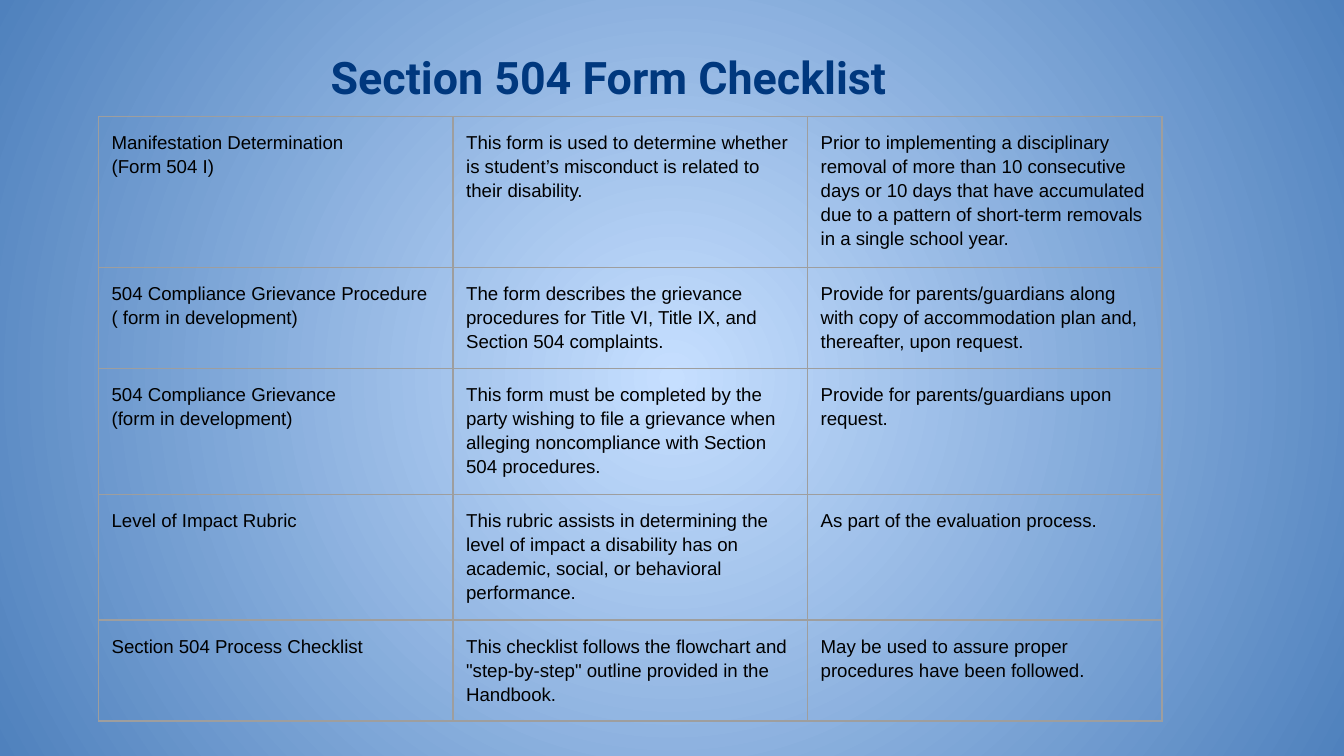
from lxml import etree
from pptx import Presentation
from pptx.dml.color import RGBColor
from pptx.enum.text import MSO_ANCHOR, MSO_AUTO_SIZE, PP_ALIGN
from pptx.oxml import parse_xml
from pptx.oxml.ns import nsdecls, qn
from pptx.util import Cm, Pt

NAVY = RGBColor(0x00, 0x38, 0x7E)
BLACK = RGBColor(0x00, 0x00, 0x00)
GRID_GREY = RGBColor(0x9E, 0x9E, 0x9E)
CENTRE_BLUE = RGBColor(0xC6, 0xDF, 0xFF)
EDGE_BLUE = RGBColor(0x4F, 0x81, 0xBD)

PADDING = Cm(0.25)
ROW_HEIGHTS = [Cm(h) for h in (2.85, 1.91, 2.38, 2.38, 1.91)]

# One row per form: name lines, purpose, when to use it
FORMS = [
    (["Manifestation Determination", "(Form 504 I)"],
     ["This form is used to determine whether is student’s misconduct is related to "
      "their disability."],
     ["Prior to implementing a disciplinary removal of more than 10 consecutive days or "
      "10 days that have accumulated due to a pattern of short-term removals in a single "
      "school year."]),
    (["504 Compliance Grievance Procedure", "( form in development)"],
     ["The form describes the grievance procedures for Title VI, Title IX, and "
      "Section 504 complaints."],
     ["Provide for parents/guardians along with copy of accommodation plan and, "
      "thereafter, upon request."]),
    (["504 Compliance Grievance", "(form in development)"],
     ["This form must be completed by the party wishing to file a grievance when "
      "alleging noncompliance with Section 504 procedures."],
     ["Provide for parents/guardians upon request."]),
    (["Level of Impact Rubric"],
     ["This rubric assists in determining the level of impact a disability has on "
      "academic, social, or behavioral performance."],
     ["As part of the evaluation process."]),
    (["Section 504 Process Checklist"],
     ["This checklist follows the flowchart and \"step-by-step\" outline provided in "
      "the Handbook."],
     ["May be used to assure proper procedures have been followed."]),
]


def add_run(paragraph, text, font_name, size, colour, bold=False):
    run = paragraph.add_run()
    run.text = text
    run.font.name = font_name
    run.font.size = size
    run.font.bold = bold
    run.font.color.rgb = colour


def set_padding(box):
    box.margin_left = box.margin_right = PADDING
    box.margin_top = box.margin_bottom = PADDING


def paint_background(slide):
    """Radial gradient, light in the centre."""
    fill = slide.background.fill
    fill.gradient()
    centre, edge = fill.gradient_stops
    centre.position, centre.color.rgb = 0, CENTRE_BLUE
    edge.position, edge.color.rgb = 1, EDGE_BLUE
    gradient = slide.background._cSld.find(".//" + qn("a:gradFill"))
    gradient.replace(gradient.find(qn("a:lin")), parse_xml(
        f'<a:path {nsdecls("a")} path="circle">'
        '<a:fillToRect l="50000" t="50000" r="50000" b="50000"/></a:path>'))


def place_title(slide, left, top, width, height):
    title = slide.shapes.title
    title.left, title.top, title.width, title.height = left, top, width, height
    frame = title.text_frame
    frame.auto_size = MSO_AUTO_SIZE.NONE
    frame.word_wrap = True
    frame.vertical_anchor = MSO_ANCHOR.MIDDLE
    set_padding(frame)
    heading = frame.paragraphs[0]
    heading.alignment = PP_ALIGN.LEFT
    add_run(heading, "Section 504 Form Checklist", "Roboto", Pt(24), NAVY, bold=True)


def add_borders(cell):
    properties = cell._tc.get_or_add_tcPr()
    for index, side in enumerate(("lnL", "lnR", "lnT", "lnB")):
        border = etree.Element(qn(f"a:{side}"), w=str(Pt(0.75)))
        solid = etree.SubElement(border, qn("a:solidFill"))
        etree.SubElement(solid, qn("a:srgbClr"), val=str(GRID_GREY))
        properties.insert(index, border)


def fill_cell(cell, lines):
    set_padding(cell)
    cell.fill.background()
    add_borders(cell)
    frame = cell.text_frame
    for index, line in enumerate(lines):
        paragraph = frame.add_paragraph() if index else frame.paragraphs[0]
        paragraph.line_spacing = 1.15
        add_run(paragraph, line, "Arial", Pt(10), BLACK)


def place_checklist(slide, left, top, width, height):
    checklist = slide.shapes.add_table(
        len(FORMS), len(FORMS[0]), left, top, width, height).table
    checklist.first_row = checklist.horz_banding = False
    for row, row_height, form in zip(checklist.rows, ROW_HEIGHTS, FORMS):
        row.height = row_height
        for cell, lines in zip(row.cells, form):
            fill_cell(cell, lines)


def main():
    deck = Presentation()
    deck.slide_width, deck.slide_height = Cm(25.4), Cm(14.29)
    slide = deck.slides.add_slide(deck.slide_layouts[5])  # title only
    paint_background(slide)
    place_checklist(slide, Cm(1.86), Cm(2.2), Cm(20.1), sum(ROW_HEIGHTS))
    place_title(slide, Cm(6), Cm(0.84), Cm(12.6), Cm(1.22))
    deck.save("out.pptx")


if __name__ == "__main__":
    main()
